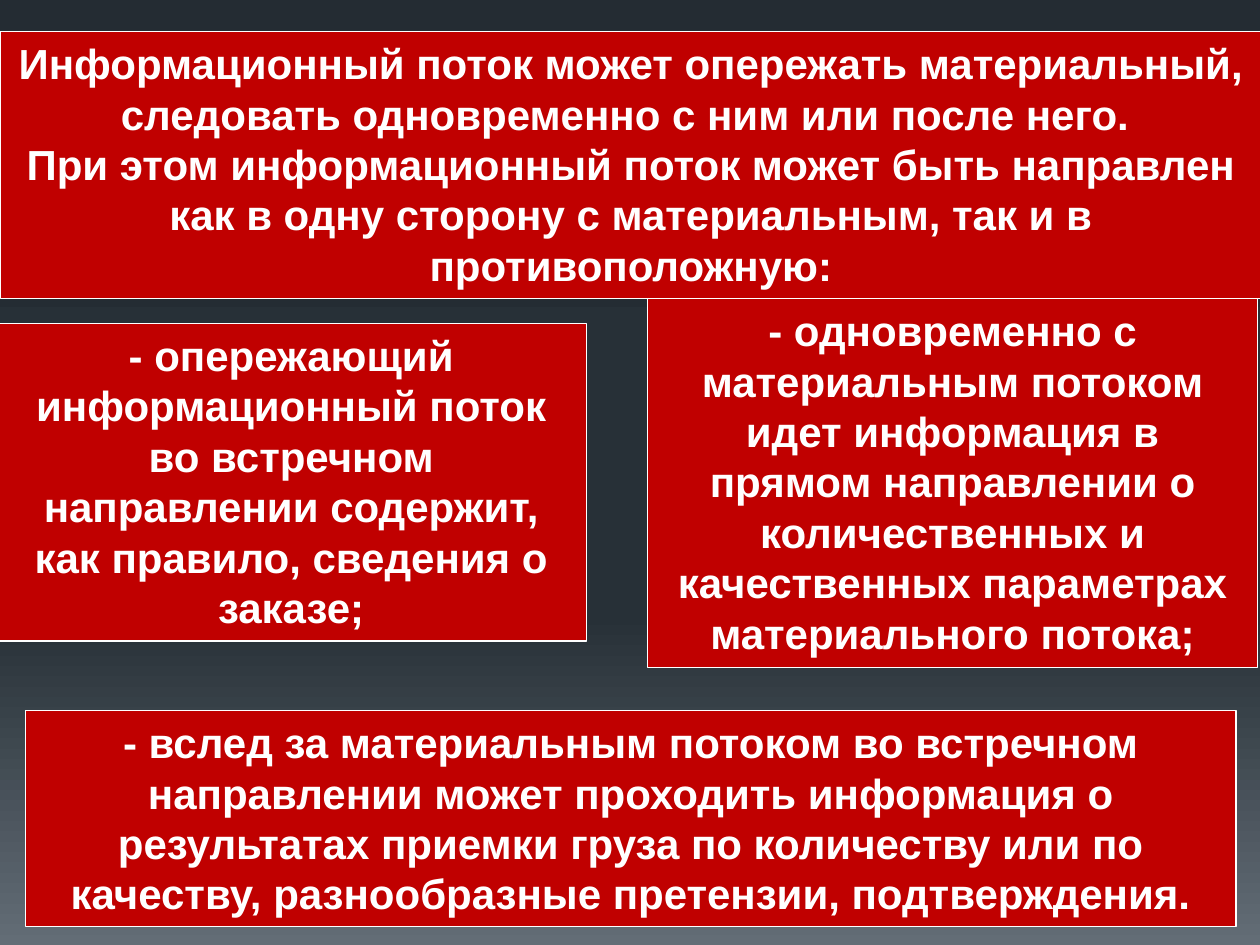
from copy import deepcopy

from pptx import Presentation
from pptx.dml.color import RGBColor
from pptx.enum.shapes import MSO_SHAPE
from pptx.enum.text import MSO_ANCHOR, MSO_AUTO_SIZE, PP_ALIGN
from pptx.util import Pt

COLORS = {
    "night": "242C33",
    "slate": "273037",
    "mist": "636D76",
    "red": "C00000",
    "white": "FFFFFF",
}
FONT = {"name": "Arial", "size": Pt(24), "bold": True}
FRAME = {
    "word_wrap": True,
    "auto_size": MSO_AUTO_SIZE.SHAPE_TO_FIT_TEXT,
    "vertical_anchor": MSO_ANCHOR.TOP,
}


def set_all(target, values):
    for name, value in values.items():
        setattr(target, name, value)


class FlowSlide:
    """Holds the current page and the style of its elements."""

    def __init__(self, page):
        self.page = page

    def color(self, name):
        return RGBColor.from_string(COLORS[name])

    def background(self, stops):
        """Fill the page from top to bottom with (position, colour) stops."""
        fill = self.page.background.fill
        fill.gradient()
        fill.gradient_angle = 270
        last = self.page.element.xpath(".//p:bg//a:gs")[-1]
        for _ in stops[2:]:
            last.addnext(deepcopy(last))
        for stop, (position, name) in zip(fill.gradient_stops, stops):
            stop.position = position
            stop.color.rgb = self.color(name)

    def text_panel(self, left, top, width, height, paragraphs):
        box = self.page.shapes.add_shape(
            MSO_SHAPE.RECTANGLE, Pt(left), Pt(top), Pt(width), Pt(height))
        box.shadow.inherit = False
        box.fill.solid()
        box.fill.fore_color.rgb = self.color("red")
        box.line.color.rgb = self.color("white")
        box.line.width = Pt(0.75)
        frame = box.text_frame
        set_all(frame, FRAME)
        for index, text in enumerate(paragraphs):
            para = frame.add_paragraph() if index else frame.paragraphs[0]
            para.alignment = PP_ALIGN.CENTER
            span = para.add_run()
            span.text = text
            set_all(span.font, FONT)
            span.font.color.rgb = self.color("white")


PANELS = [
    (0.5, 18, 720, 152.6, [
        "Информационный поток может опережать материальный, следовать "
        "одновременно с ним или после него. ",
        "При этом информационный поток может быть направлен как в одну "
        "сторону с материальным, так и в противоположную:",
    ]),
    (-2.4, 184.8, 337.6, 181.6, [
        "- опережающий информационный поток во встречном направлении "
        "содержит, как правило, сведения о заказе;",
    ]),
    (370, 170.6, 348.6, 210.8, [
        "- одновременно с материальным потоком идет информация в прямом "
        "направлении о количественных и качественных параметрах "
        "материального потока;",
    ]),
    (14.4, 406, 692, 123.6, [
        "- вслед за материальным потоком во встречном направлении может "
        "проходить информация о результатах приемки груза по количеству "
        "или по качеству, разнообразные претензии, подтверждения.",
    ]),
]


def main():
    deck = Presentation()
    deck.slide_width, deck.slide_height = Pt(720), Pt(540)
    slide = FlowSlide(deck.slides.add_slide(deck.slide_layouts[6]))
    slide.background([(0, "night"), (0.65, "slate"), (1, "mist")])
    for panel in PANELS:
        slide.text_panel(*panel)
    deck.save("out.pptx")


if __name__ == "__main__":
    main()
